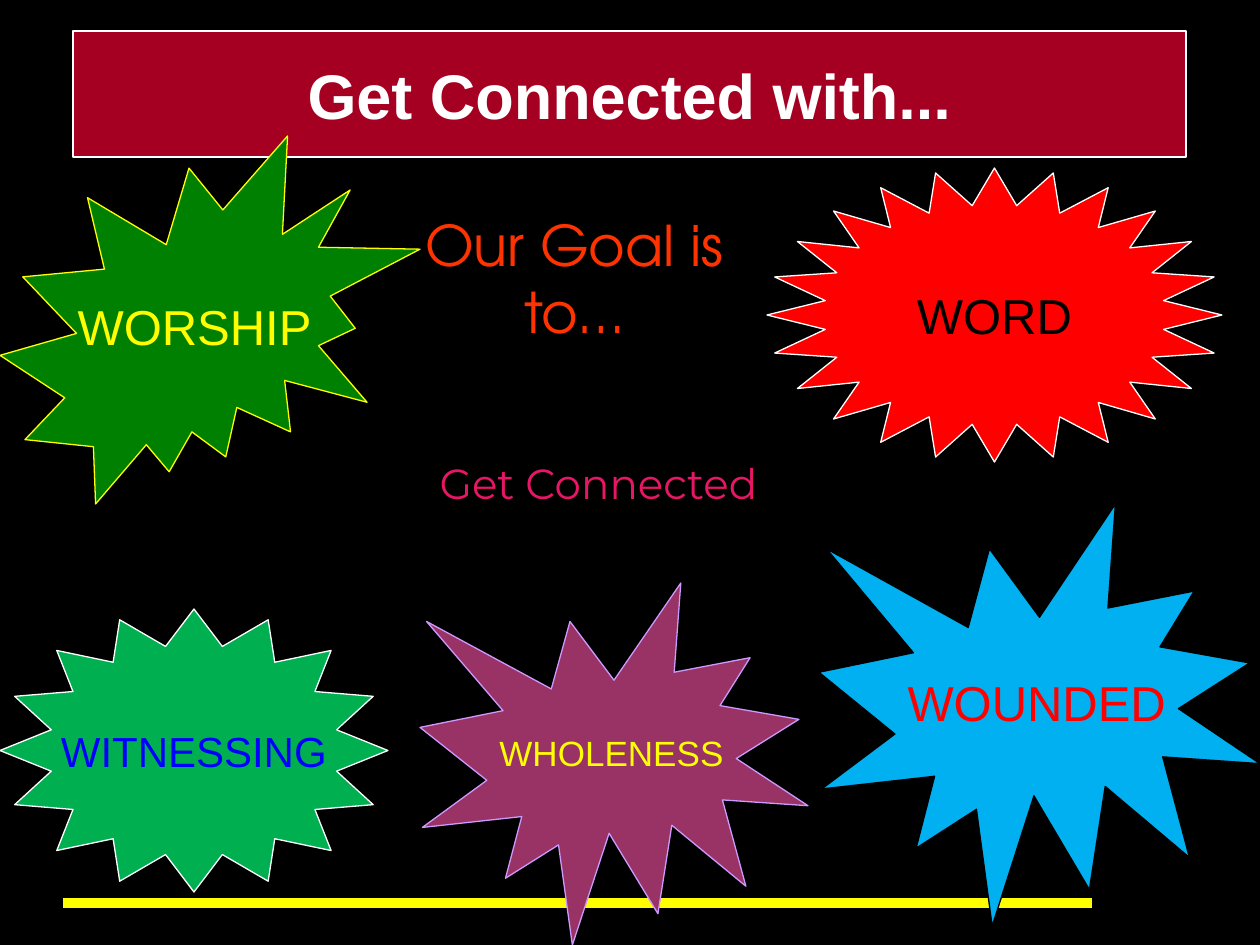
from lxml import etree
from pptx import Presentation
from pptx.dml.color import RGBColor
from pptx.enum.shapes import MSO_CONNECTOR, MSO_SHAPE
from pptx.enum.text import MSO_ANCHOR, MSO_AUTO_SIZE, PP_ALIGN
from pptx.oxml.ns import qn
from pptx.util import Pt

PX = 914400 / 126
TITLE_ONLY = 5
STRAIGHT = MSO_CONNECTOR.STRAIGHT
BURST, WIDE_BURST = MSO_SHAPE.EXPLOSION1, MSO_SHAPE.EXPLOSION2
STAR_16, STAR_24 = MSO_SHAPE.STAR_16_POINT, MSO_SHAPE.STAR_24_POINT
TOP, MIDDLE = MSO_ANCHOR.TOP, MSO_ANCHOR.MIDDLE
CENTER = PP_ALIGN.CENTER
NO_FIT = MSO_AUTO_SIZE.NONE

# word, text size that fits between the notches, outline, box in px,
# fill, line colour, text colour
BURSTS = [
    ("WORSHIP", 28, WIDE_BURST, (0, 136, 420, 368), "008000", "FFFF00", "FFFF00"),
    ("WITNESSING", 24, STAR_16, (0, 609, 388, 283), "00B050", "FFFFFF", "0000FF"),
    ("WORD", 28, STAR_24, (767, 168, 455, 294), "FF0000", "FFFFFF", "000000"),
    ("WOUNDED", 28, BURST, (819, 504, 441, 422), "00B0F0", "000000", "FF0000"),
    ("WHOLENESS", 20, BURST, (420, 583, 388, 362), "993366", "CC99FF", "FFFF00"),
]


def px(*lengths):
    return [round(length * PX) for length in lengths]


def color(hex_code):
    return RGBColor.from_string(hex_code)


def paint(shape, fill, line):
    shape.fill.solid()
    shape.fill.fore_color.rgb = color(fill)
    shape.line.color.rgb = color(line)
    shape.line.width = Pt(0.75)


def write(shape, text, size, ink, font="Arial", bold=False, anchor=MIDDLE, wrap=False):
    frame = shape.text_frame
    frame.auto_size = NO_FIT
    frame.word_wrap = wrap
    frame.vertical_anchor = anchor
    para = frame.paragraphs[0]
    para.alignment = CENTER
    span = para.add_run()
    span.text = text
    span.font.name = font
    span.font.size = Pt(size)
    span.font.bold = bold
    span.font.color.rgb = color(ink)


def add_banner(page, box):
    title = page.shapes.title
    title.left, title.top, title.width, title.height = px(*box)
    paint(title, "A50021", "FFFFFF")
    write(title, "Get Connected with...", 36, "FFFFFF", bold=True)


def add_burst(page, word, size, outline, box, fill, line, ink):
    burst = page.shapes.add_shape(outline, *px(*box))
    burst.shadow.inherit = False
    paint(burst, fill, line)
    write(burst, word, size, ink)


def add_rule(page, left, right, y):
    rule = page.shapes.add_connector(STRAIGHT, *px(left, y, right, y))
    rule.line.color.rgb = color("FFFF00")
    rule.line.width = Pt(6)
    etree.SubElement(rule._element.spPr, qn("a:effectLst"))


def add_goal(page, box):
    goal = page.shapes.add_textbox(*px(*box))
    goal.text_frame.margin_left, goal.text_frame.margin_right = px(0, 101)
    write(goal, "Our Goal is to…", 32, "FF3300", font="TeX Gyre Adventor",
          anchor=TOP, wrap=True)


def add_call(page, box):
    call = page.shapes.add_textbox(*px(*box))
    write(call, "Get Connected", 24, "E81766", font="Montserrat", anchor=TOP, wrap=True)


def main():
    deck = Presentation()
    deck.slide_width, deck.slide_height = px(1260, 945)
    page = deck.slides.add_slide(deck.slide_layouts[TITLE_ONLY])
    page.background.fill.solid()
    page.background.fill.fore_color.rgb = color("000000")

    add_banner(page, (73, 31, 1113, 126))
    add_rule(page, 63, 1092, 903)
    for burst in BURSTS:
        add_burst(page, *burst)
    add_goal(page, (412, 204, 426, 79))
    add_call(page, (126, 451, 945, 105))
    deck.save("out.pptx")


if __name__ == "__main__":
    main()
